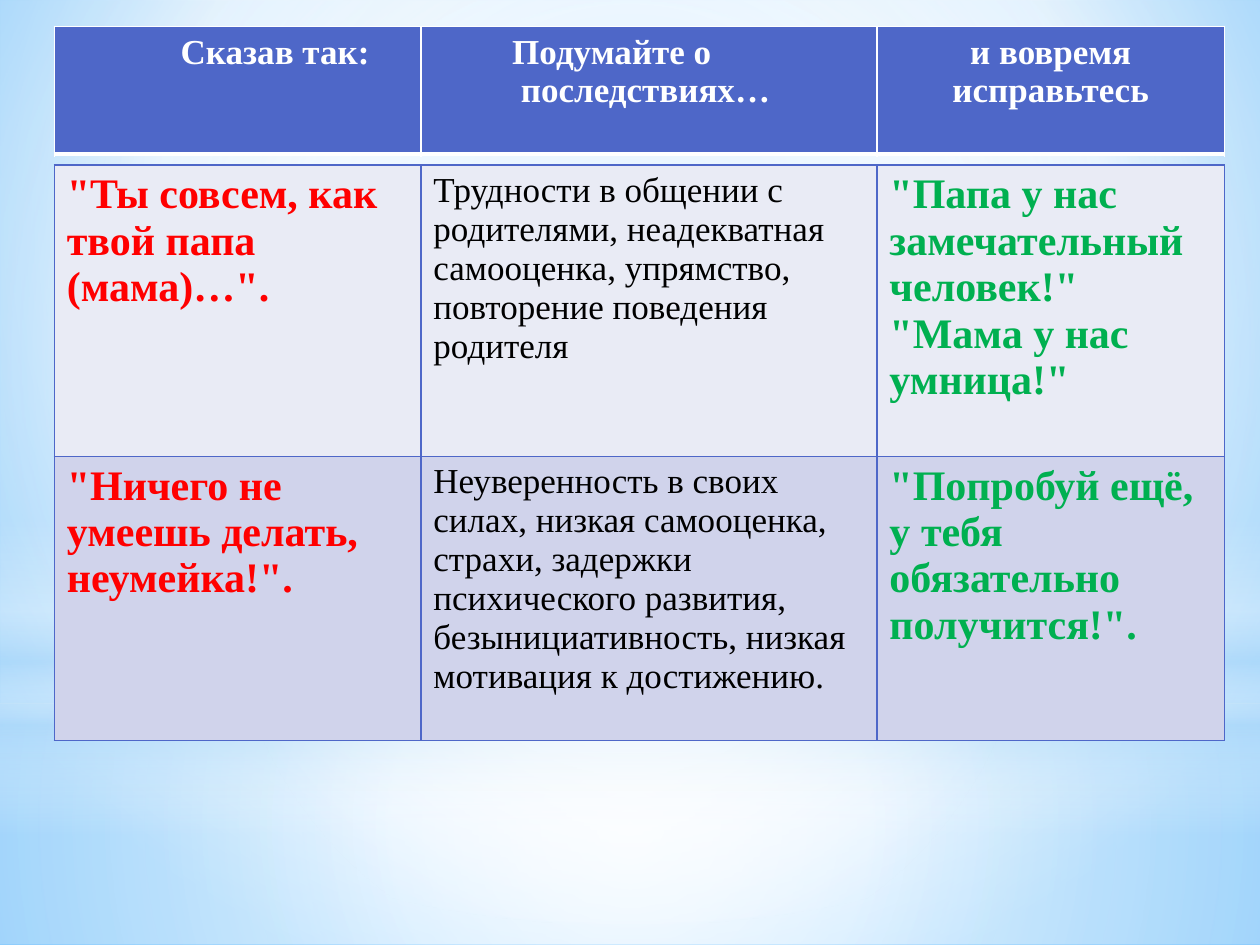
from pptx import Presentation
from pptx.dml.color import RGBColor as Rgb
from pptx.enum.shapes import MSO_SHAPE as Shape
from pptx.enum.text import PP_ALIGN as Align
from pptx.oxml.ns import qn
from pptx.util import Pt
from lxml.etree import SubElement as Sub

THEME = dict(font="Times New Roman", blue="4E67C8", pale="E9EBF5", band="D0D3EB",
             white="FFFFFF", black="000000", red="FF0000", green="00B050",
             head=20, body=20, quote=24)

# Each header line: text, left indent, alignment
HEADS = [
    [("Сказав так:", 65, Align.LEFT)],
    [("Подумайте о", 45, Align.LEFT), ("последствиях…", 50, Align.LEFT)],
    [("и вовремя исправьтесь", 0, Align.CENTER)],
]
ROWS = [
    ('"Ты совсем, как твой папа (мама)…".',
     "Трудности в общении с родителями, неадекватная самооценка, упрямство, "
     "повторение поведения родителя",
     '"Папа у нас замечательный человек!" "Мама у нас умница!"'),
    ('"Ничего не умеешь делать, неумейка!".',
     "Неуверенность в своих силах, низкая самооценка, страхи, задержки "
     "психического развития, безынициативность, низкая мотивация к достижению.",
     '"Попробуй ещё, у тебя обязательно получится!".'),
]
LOOKS = [("red", "quote", True), ("black", "body", False), ("green", "quote", True)]
LEFT, WIDTHS = 31, (209.5, 260.6, 198.7)
HEAD_TOP, HEAD_HIGH = 15.1, 73
BODY_TOP, BODY_HIGH = 94.3, (166.5, 162.5)

# Gradient stops: position, colour, opacity (all in percent)
SKY = [(0, "9ED5FF", 100), (60, "FFFFFF", 100), (100, "5BB9FF", 100)]
MID = (50, 50, 50, 50)
# Glow: shape, top, height, stops, centre (None for a vertical gradient)
GLOWS = [
    (Shape.RECTANGLE, 402, 138,
     [(0, "FFFFFF", 91), (37, "FFFFFF", 76), (100, "B4DCFA", 79)], MID),
    (Shape.RECTANGLE, 0, 402,
     [(0, "FFFFFF", 89), (48, "FFFFFF", 62), (100, "B4DCFA", 79)], MID),
    (Shape.RECTANGLE, 297, 180,
     [(0, "FFFFFF", 0), (29, "FFFFFF", 30), (45, "B4DCFA", 40),
      (55, "FFFFFF", 26), (65, "B4DCFA", 60), (100, "FFFFFF", 0)], None),
    (Shape.OVAL, 126, 402, [(0, "FFFFFF", 100), (56, "FFFFFF", 0)], MID),
]


def blend(fill, root, stops, mid):
    """Give a fill found under root a radial or vertical gradient."""
    fill.gradient()
    grad = root.find(".//" + qn("a:gradFill"))
    for old in list(grad):
        grad.remove(old)
    group = Sub(grad, qn("a:gsLst"))
    for pos, tint, alpha in stops:
        stop = Sub(group, qn("a:gs"), pos=str(pos * 1000))
        clr = Sub(stop, qn("a:srgbClr"), val=tint)
        Sub(clr, qn("a:alpha"), val=str(alpha * 1000))
    if mid:
        way = Sub(grad, qn("a:path"), path="circle")
        sides = {side: str(n * 1000) for side, n in zip("ltrb", mid)}
        Sub(way, qn("a:fillToRect"), **sides)
    else:
        Sub(grad, qn("a:lin"), ang="5400000", scaled="0")


def add_grid(slide, top, highs):
    box = slide.shapes.add_table(len(highs), len(WIDTHS), Pt(LEFT), Pt(top),
                                 Pt(sum(WIDTHS)), Pt(sum(highs)))
    grid = box.table
    grid.first_row = grid.horz_banding = False
    for col, wide in zip(grid.columns, WIDTHS):
        col.width = Pt(wide)
    for row, high in zip(grid.rows, highs):
        row.height = Pt(high)
    return grid


def dress(cell, fill, edge, base=1):
    """Set the borders and fill; base is the width of the bottom border."""
    props = cell._tc.get_or_add_tcPr()
    for side, wide in zip("LRTB", (1, 1, 1, base)):
        line = Sub(props, qn("a:ln" + side), w=str(Pt(wide)))
        solid = Sub(line, qn("a:solidFill"))
        Sub(solid, qn("a:srgbClr"), val=THEME[edge])
    cell.fill.solid()
    cell.fill.fore_color.rgb = Rgb.from_string(THEME[fill])


def write(para, text, tint, size, bold):
    run = para.add_run()
    run.text = text
    style = dict(name=THEME["font"], size=Pt(THEME[size]), bold=bold)
    for key, value in style.items():
        setattr(run.font, key, value)
    run.font.color.rgb = Rgb.from_string(THEME[tint])


def main():
    deck = Presentation()
    deck.slide_width, deck.slide_height = Pt(720), Pt(540)
    slide = deck.slides.add_slide(deck.slide_layouts[6])
    blend(slide.background.fill, slide._element, SKY, (20, 10, 20, 60))
    for kind, top, high, stops, mid in GLOWS:
        glow = slide.shapes.add_shape(kind, 0, Pt(top), Pt(720), Pt(high))
        glow.shadow.inherit = False
        glow.line.fill.background()
        blend(glow.fill, glow._element, stops, mid)

    grid = add_grid(slide, HEAD_TOP, [HEAD_HIGH])
    for cell, lines in zip(grid.rows[0].cells, HEADS):
        dress(cell, "blue", "white", 3)
        frame = cell.text_frame
        for i, (text, indent, align) in enumerate(lines):
            para = frame.add_paragraph() if i else frame.paragraphs[0]
            para.alignment = align
            para._p.get_or_add_pPr().set("marL", str(Pt(indent)))
            write(para, text, "white", "head", True)

    grid = add_grid(slide, BODY_TOP, BODY_HIGH)
    for row, texts, fill in zip(grid.rows, ROWS, ("pale", "band")):
        for cell, text, look in zip(row.cells, texts, LOOKS):
            dress(cell, fill, "blue")
            write(cell.text_frame.paragraphs[0], text, *look)
    deck.save("out.pptx")


if __name__ == "__main__":
    main()
